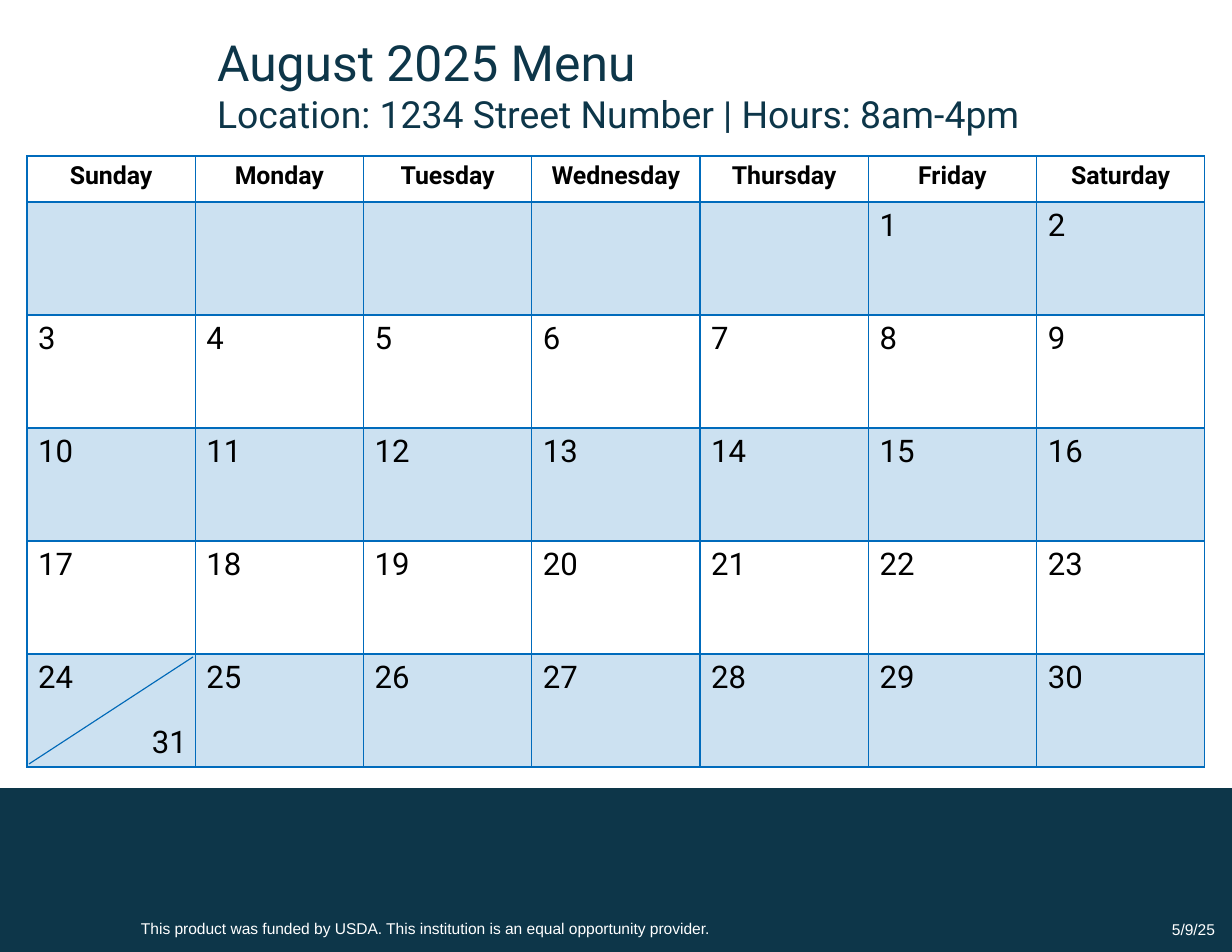
"""Builds a monthly menu calendar slide for August 2025."""
from lxml.etree import SubElement
from pptx import Presentation
from pptx.dml.color import RGBColor
from pptx.enum.shapes import MSO_CONNECTOR, MSO_SHAPE
from pptx.enum.text import MSO_ANCHOR, PP_ALIGN
from pptx.oxml import parse_xml
from pptx.oxml.ns import nsdecls, qn
from pptx.util import Emu, Pt

NAVY, BLUE, LINE, WHITE, BLACK = "0D3649", "006BBC", "0069B8", "FFFFFF", "000000"
rgb = RGBColor.from_string


def px(n):
    return Emu(round(n * 914400 / 112))


def write(p, text, align, **fmt):
    p.alignment = align
    r = p.add_run()
    r.text = text
    r.font.color.rgb = rgb(fmt.pop("color"))
    for name, value in fmt.items():
        setattr(r.font, name, value)


prs = Presentation()
prs.slide_width, prs.slide_height = px(1232), px(952)
s = prs.slides.add_slide(prs.slide_layouts[6])

footer = s.shapes.add_shape(MSO_SHAPE.RECTANGLE, px(0), px(788), px(1232), px(164))
footer.shadow.inherit = False
footer.fill.solid()
footer.fill.fore_color.rgb = rgb(NAVY)
footer.line.fill.background()

table = s.shapes.add_table(6, 7, px(27), px(156), px(1178), px(611)).table
table.first_row = table.horz_banding = False
for col in table.columns:
    col.width = px(1178) // 7
for i, row in enumerate(table.rows):
    row.height = px(113 if i else 46)

days = ["Sunday", "Monday", "Tuesday", "Wednesday", "Thursday", "Friday", "Saturday"]
for i, row in enumerate(table.rows):
    for j, cell in enumerate(row.cells):
        date = 7 * (i - 1) + j - 4
        p = cell.text_frame.paragraphs[0]
        if i == 0:
            write(p, days[j], PP_ALIGN.CENTER, name="Roboto", size=Pt(16), bold=True, color=BLACK)
        elif date > 0:
            write(p, str(date), PP_ALIGN.LEFT, name="Roboto", size=Pt(20), bold=False, color=BLACK)
        tc_pr = cell._tc.get_or_add_tcPr()
        if i % 2:
            cell.fill.solid()
            cell.fill.fore_color.rgb = rgb(BLUE)
            SubElement(tc_pr.find(".//" + qn("a:srgbClr")), qn("a:alpha"), val="20000")
        else:
            cell.fill.background()
        for k, side in enumerate("LRTB"):
            heavy = (i, side) in ((0, "B"), (1, "T"))
            tc_pr.insert(k, parse_xml(
                f'<a:ln{side} {nsdecls("a")} w="{Pt(2 if heavy else 1)}"><a:solidFill>'
                f'<a:srgbClr val="{BLUE}"/></a:solidFill></a:ln{side}>'))

texts = [
    ((206, 26, 868, 116), PP_ALIGN.LEFT, MSO_ANCHOR.TOP, "Roboto", NAVY,
     [("August 2025 Menu", 32), ("Location: 1234 Street Number | Hours: 8am-4pm", 24)]),
    ((141, 717, 65, 49), PP_ALIGN.LEFT, MSO_ANCHOR.TOP, "Roboto", BLACK, [("31", 20)]),
    ((130, 913, 793, 30), PP_ALIGN.LEFT, MSO_ANCHOR.TOP, "Arial", WHITE,
     [("This product was funded by USDA. This institution is an equal opportunity provider.", 10)]),
    ((949, 904, 277, 50), PP_ALIGN.RIGHT, MSO_ANCHOR.MIDDLE, "Arial", WHITE, [("5/9/25", 10)]),
]
for box, align, anchor, font, color, lines in texts:
    tf = s.shapes.add_textbox(*map(px, box)).text_frame
    tf.word_wrap = True
    tf.vertical_anchor = anchor
    for i, (text, size) in enumerate(lines):
        p = tf.add_paragraph() if i else tf.paragraphs[0]
        write(p, text, align, name=font, size=Pt(size), color=color)

split = s.shapes.add_connector(MSO_CONNECTOR.STRAIGHT, px(29), px(764), px(193), px(657))
split.line.color.rgb = rgb(LINE)
split.line.width = Pt(0.75)
SubElement(split._element.spPr, qn("a:effectLst"))

prs.save("out.pptx")
